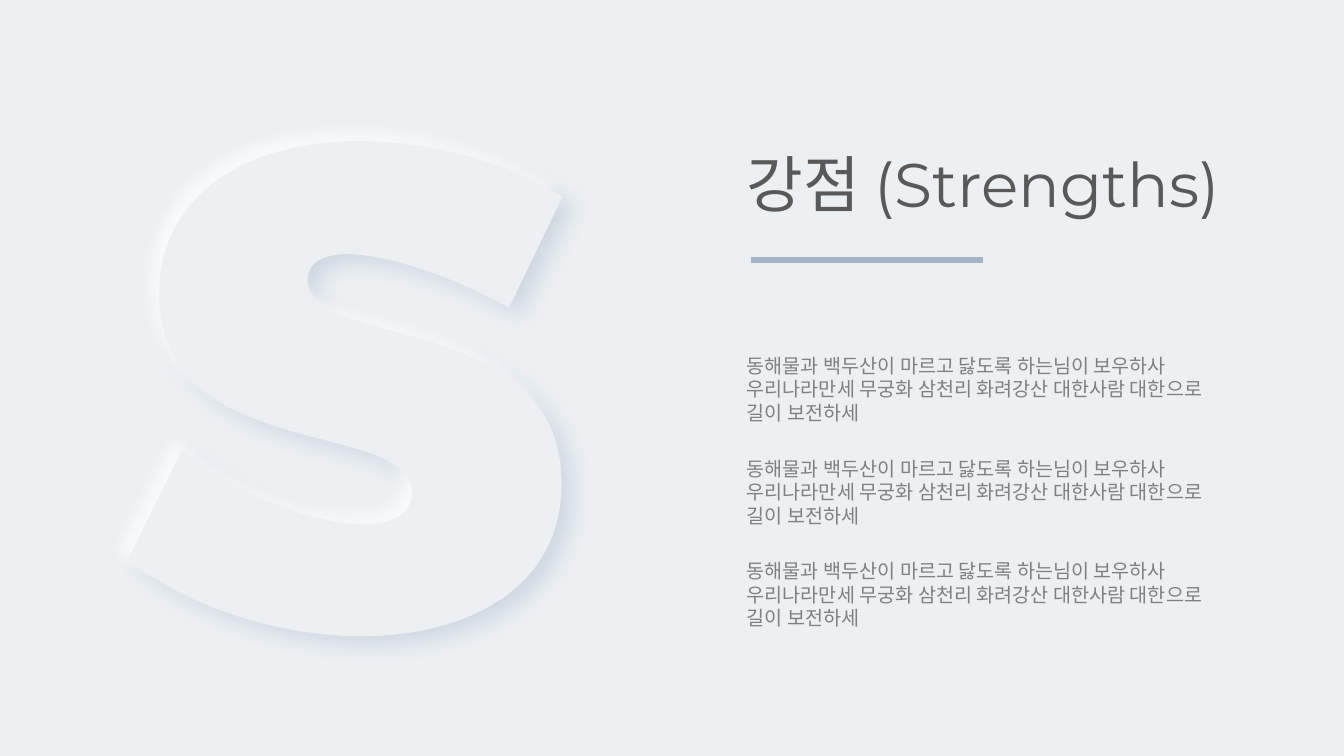
from lxml.etree import SubElement
from pptx import Presentation
from pptx.dml.color import RGBColor
from pptx.enum.shapes import MSO_CONNECTOR
from pptx.enum.text import MSO_ANCHOR, MSO_AUTO_SIZE, PP_ALIGN
from pptx.oxml.ns import qn
from pptx.util import Cm, Pt

BACK = RGBColor(0xEC, 0xF0, 0xF3)
BLUE = RGBColor(0xA6, 0xB4, 0xC8)
WHITE = RGBColor(0xFF, 0xFF, 0xFF)
DARK = RGBColor(0x59, 0x59, 0x59)
GREY = RGBColor(0x80, 0x80, 0x80)
LATIN, HANGUL = "Montserrat", "Noto Sans CJK KR"


def add_run(para, text, size, color):
    run = para.add_run()
    run.text = text
    run.font.name = LATIN
    run.font.size = Pt(size)
    run.font.color.rgb = color
    SubElement(run.font._element, qn("a:ea"), typeface=HANGUL)


def add_shadow(shape, color, alpha, blur, dist, angle):
    shape.shadow.inherit = False
    effects = shape._element.spPr.find(qn("a:effectLst"))
    outer = SubElement(effects, qn("a:outerShdw"), blurRad=str(Pt(blur)),
                       dist=str(Pt(dist)), dir=str(angle * 60000),
                       algn="ctr", rotWithShape="0")
    tint = SubElement(outer, qn("a:srgbClr"), val=str(color))
    SubElement(tint, qn("a:alpha"), val=str(alpha * 1000))


# Slide and background
prs = Presentation()
prs.slide_width, prs.slide_height = Cm(33.87), Cm(19.05)
slide = prs.slides.add_slide(prs.slide_layouts[5])
shapes = slide.shapes
slide.background.fill.solid()
slide.background.fill.fore_color.rgb = BACK

# Outline of the letter S on a grid of 0.01 inch, from its left top corner:
# two numbers for a line, six for a curve
UNIT = Cm(0.0254)
LEFT, TOP = 127, 140
START = (431, 55)
STEPS = [
    (378, 165),
    (329, 137, 259, 112, 218, 112),
    (194, 112, 178, 120, 178, 138),
    (178, 208, 430, 167, 430, 340),
    (430, 442, 339, 491, 231, 491),
    (150, 491, 60, 462, 0, 415),
    (54, 306),
    (103, 348, 183, 380, 233, 380),
    (263, 380, 282, 370, 282, 348),
    (282, 275, 31, 321, 31, 151),
    (31, 59, 110, 0, 230, 0),
    (303, 0, 379, 22, 431, 55),
]

# Raised letter: dark shadow below, light one above
for shade in [(BLUE, 40, 15, 10, 40), (WHITE, 75, 10, 10, 225)]:
    pen = shapes.build_freeform(*START, scale=UNIT)
    pen.add_line_segments([step[-2:] for step in STEPS], close=True)
    letter = pen.convert_to_shape(LEFT * UNIT, TOP * UNIT)
    edges = list(letter._element.iter(qn("a:lnTo")))
    for edge, step in zip(edges, STEPS):
        if len(step) == 6:
            parent = edge.getparent()
            curve = SubElement(parent, qn("a:cubicBezTo"))
            for x, y in zip(step[::2], step[1::2]):
                SubElement(curve, qn("a:pt"), x=str(x), y=str(y))
            parent.replace(edge, curve)
    letter.fill.solid()
    letter.fill.fore_color.rgb = BACK
    letter.line.fill.background()
    letter.left, letter.top = LEFT * UNIT, TOP * UNIT
    add_shadow(letter, *shade)

# Title
title = shapes.title
title.left, title.top, title.width, title.height = Cm(18.57), Cm(3.56), Cm(13.5), Cm(2.13)
frame = title.text_frame
frame.word_wrap = True
frame.auto_size = MSO_AUTO_SIZE.NONE
frame.vertical_anchor = MSO_ANCHOR.TOP
head = frame.paragraphs[0]
head.alignment = PP_ALIGN.LEFT
add_run(head, "강점 ", 44, DARK)
add_run(head, "(Strengths)", 44, DARK)

# Three text blocks at equal steps
LINES = [
    "동해물과 백두산이 마르고 닳도록 하는님이 보우하사",
    "우리나라만세 무궁화 삼천리 화려강산 대한사람 대한으로",
    "길이 보전하세",
]
for row in range(3):
    box = shapes.add_textbox(Cm(18.57), Cm(8.79 + 2.59 * row), Cm(12), Cm(2.06))
    frame = box.text_frame
    frame.word_wrap = True
    for n, line in enumerate(LINES):
        para = frame.add_paragraph() if n else frame.paragraphs[0]
        add_run(para, line, 14, GREY)

# Rule under the title
rule = shapes.add_connector(MSO_CONNECTOR.STRAIGHT, Cm(18.92), Cm(6.56), Cm(24.77), Cm(6.56))
rule.line.color.rgb = BLUE
rule.line.width = Pt(4.5)
SubElement(rule._element.spPr, qn("a:effectLst"))

prs.save("out.pptx")
